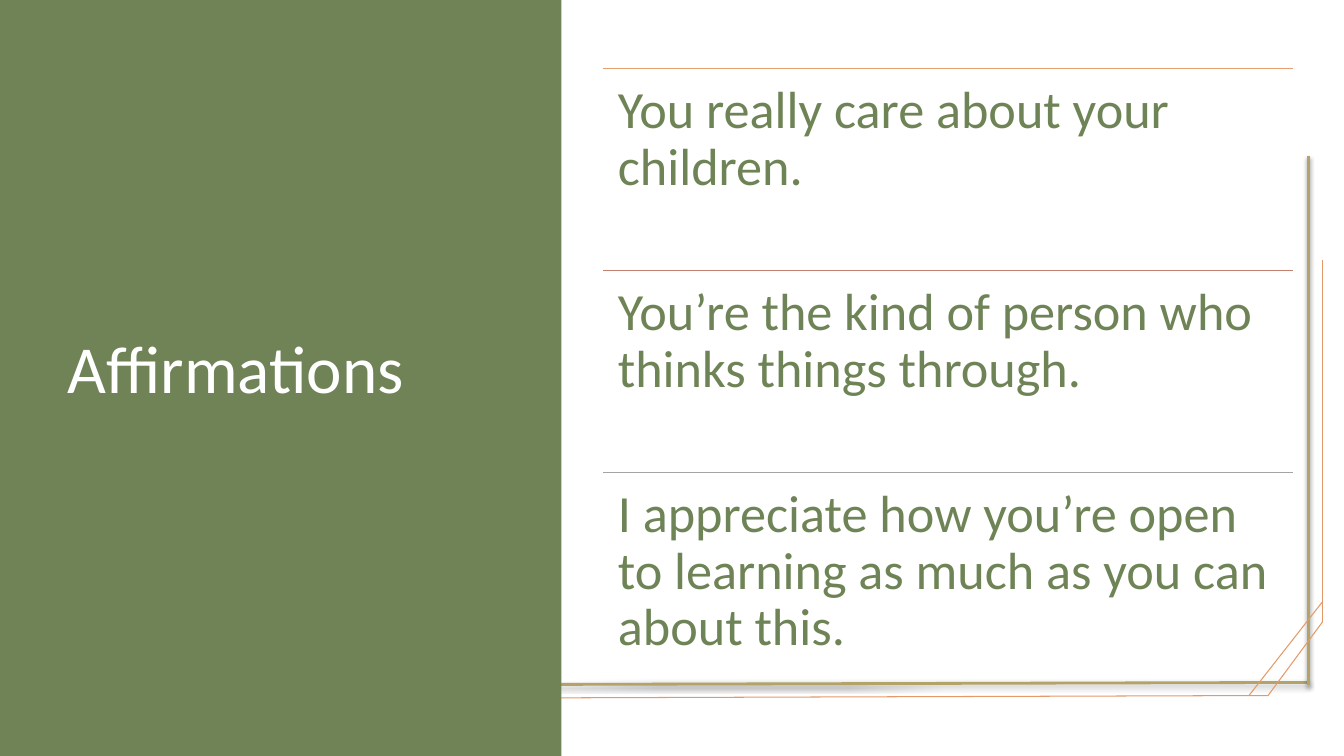
from dataclasses import dataclass

from lxml.etree import SubElement
from pptx import Presentation
from pptx.dml.color import RGBColor
from pptx.enum.shapes import MSO_CONNECTOR as Connector, MSO_SHAPE as Shape
from pptx.enum.text import MSO_ANCHOR as Anchor, PP_ALIGN as Align
from pptx.oxml.ns import qn
from pptx.slide import Slide
from pptx.text.text import TextFrame
from pptx.util import Emu, Inches, Pt

WHITE = RGBColor(0xFF, 0xFF, 0xFF)
PANEL_GREEN = RGBColor(0x6F, 0x83, 0x56)
TEXT_GREEN = RGBColor(0x6F, 0x84, 0x56)
GOLD = RGBColor(0xB3, 0xA3, 0x69)
ORANGE = RGBColor(0xE3, 0x9A, 0x68)
RULE_ORANGE = RGBColor(0xE5, 0x9E, 0x6D)
RULE_RED = RGBColor(0xC4, 0x7F, 0x6E)
RULE_GREY = RGBColor(0xA4, 0xA4, 0xA4)

SLIDE_WIDTH, SLIDE_HEIGHT = Inches(13.33), Inches(7.5)

# Percentages of the slide's width and height
PANEL_WIDTH = 41.78
LIST_LEFT, LIST_WIDTH = 44.85, 51.38
LIST_TOP, ROW_HEIGHT = 9.07, 26.73


@dataclass(frozen=True)
class Stroke:
    """A straight line between two points given in slide percentages."""
    start: tuple[float, float]
    end: tuple[float, float]
    color: RGBColor
    weight: float
    shadowed: bool = False


@dataclass(frozen=True)
class Affirmation:
    text: str
    rule_color: RGBColor


FRAME = [
    Stroke((12.45, 90.67), (97.35, 90.27), GOLD, 2, shadowed=True),
    Stroke((97.35, 20.67), (97.35, 90.67), GOLD, 2, shadowed=True),
    Stroke((98.4, 82.27), (94.35, 92), ORANGE, 0.75),
    Stroke((98.4, 79.6), (92.93, 92), ORANGE, 0.75),
    Stroke((94.35, 92), (25.73, 92.4), ORANGE, 0.75),
    Stroke((98.4, 82.27), (98.4, 34.4), ORANGE, 0.75),
]

AFFIRMATIONS = [
    Affirmation("You really care about your children.", RULE_ORANGE),
    Affirmation("You’re the kind of person who thinks things through.", RULE_RED),
    Affirmation("I appreciate how you’re open to learning as much as you can about this.",
                RULE_GREY),
]


def across(percent: float) -> Emu:
    return Emu(round(SLIDE_WIDTH * percent / 100))


def down(percent: float) -> Emu:
    return Emu(round(SLIDE_HEIGHT * percent / 100))


def draw_stroke(slide: Slide, stroke: Stroke) -> None:
    line = slide.shapes.add_connector(
        Connector.STRAIGHT, across(stroke.start[0]), down(stroke.start[1]),
        across(stroke.end[0]), down(stroke.end[1]))
    line.line.color.rgb = stroke.color
    line.line.width = Pt(stroke.weight)
    effects = SubElement(line.element.spPr, qn("a:effectLst"))
    if stroke.shadowed:
        shadow = SubElement(effects, qn("a:outerShdw"), blurRad=str(Pt(3.1)),
                            dist=str(Pt(1.6)), dir="5400000", rotWithShape="0")
        black = SubElement(shadow, qn("a:srgbClr"), val="000000")
        SubElement(black, qn("a:alpha"), val="38000")


def write_text(frame: TextFrame, text: str, *, size: float, color: RGBColor,
               anchor: Anchor, inset_x: float, inset_y: float) -> None:
    frame.word_wrap = True
    frame.vertical_anchor = anchor
    frame.margin_left = frame.margin_right = Inches(inset_x)
    frame.margin_top = frame.margin_bottom = Inches(inset_y)
    para = frame.paragraphs[0]
    para.alignment = Align.LEFT
    para.line_spacing = 0.9
    span = para.add_run()
    span.text = text
    span.font.name = "Calibri"
    span.font.size = Pt(size)
    span.font.color.rgb = color


def draw_title_panel(slide: Slide) -> None:
    panel = slide.shapes.add_shape(Shape.RECTANGLE, 0, 0, across(PANEL_WIDTH), SLIDE_HEIGHT)
    panel.shadow.inherit = False
    panel.fill.solid()
    panel.fill.fore_color.rgb = PANEL_GREEN
    panel.line.fill.background()

    title = slide.shapes.title
    slide.shapes.element.append(title.element)  # bring the title in front of the panel
    title.left, title.top = across(4.28), down(LIST_TOP)
    title.width, title.height = across(31.2), down(80.27)
    write_text(title.text_frame, "Affirmations", size=48, color=WHITE,
               anchor=Anchor.MIDDLE, inset_x=0.1, inset_y=0.05)


def draw_affirmation(slide: Slide, affirmation: Affirmation, row: int) -> None:
    top = LIST_TOP + row * ROW_HEIGHT
    draw_stroke(slide, Stroke((LIST_LEFT, top), (LIST_LEFT + LIST_WIDTH, top),
                              affirmation.rule_color, 1))
    box = slide.shapes.add_textbox(across(LIST_LEFT), down(top),
                                   across(LIST_WIDTH), down(ROW_HEIGHT))
    write_text(box.text_frame, affirmation.text, size=37.3, color=TEXT_GREEN,
               anchor=Anchor.TOP, inset_x=0.15, inset_y=0.15)


def main() -> None:
    deck = Presentation()
    deck.slide_width, deck.slide_height = SLIDE_WIDTH, SLIDE_HEIGHT
    page = deck.slides.add_slide(deck.slide_layouts[5])
    for stroke in FRAME:
        draw_stroke(page, stroke)
    draw_title_panel(page)
    for row, affirmation in enumerate(AFFIRMATIONS):
        draw_affirmation(page, affirmation, row)
    deck.save("out.pptx")


if __name__ == "__main__":
    main()
